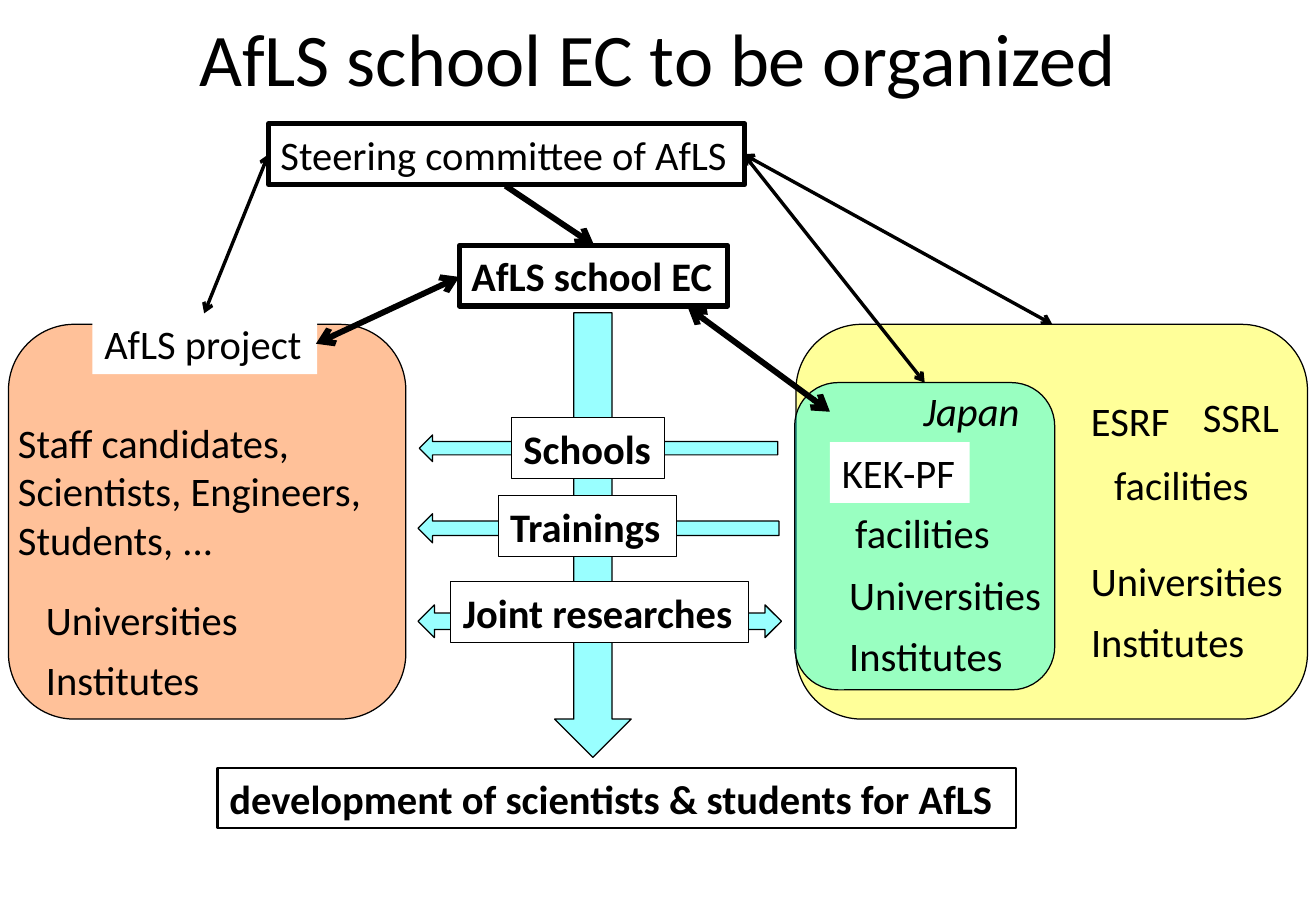
from lxml import etree
from pptx import Presentation
from pptx.dml.color import RGBColor
from pptx.enum.shapes import MSO_CONNECTOR, MSO_SHAPE
from pptx.enum.text import MSO_ANCHOR, PP_ALIGN
from pptx.oxml.ns import qn
from pptx.util import Inches, Pt

RECT = MSO_SHAPE.RECTANGLE
ROUND = MSO_SHAPE.ROUNDED_RECTANGLE
LEFT_ARROW = MSO_SHAPE.LEFT_ARROW
BOTH_ARROW = MSO_SHAPE.LEFT_RIGHT_ARROW
STRAIGHT = MSO_CONNECTOR.STRAIGHT
TOP, MIDDLE = MSO_ANCHOR.TOP, MSO_ANCHOR.MIDDLE
LEFT, CENTER = PP_ALIGN.LEFT, PP_ALIGN.CENTER

BLACK = RGBColor(0x00, 0x00, 0x00)
WHITE = RGBColor(0xFF, 0xFF, 0xFF)
CYAN = RGBColor(0x00, 0xFF, 0xFF)
ORANGE = RGBColor(0xFF, 0x66, 0x00)
YELLOW = RGBColor(0xFF, 0xFF, 0x00)

ROW = 0.5  # height of a one-line label


def write(frame, text, size=24, bold=False, italic=False, align=LEFT,
          anchor=TOP, right=0):
    """Fill a text frame, one paragraph for each line of text."""
    frame.word_wrap = True
    frame.vertical_anchor = anchor
    frame.margin_right = Inches(right)
    for i, line in enumerate(text.split("\n")):
        para = frame.paragraphs[0] if i == 0 else frame.add_paragraph()
        para.alignment = align
        run = para.add_run()
        run.text = line
        font = run.font
        font.name, font.size = "Calibri", Pt(size)
        font.bold, font.italic = bold, italic
        font.color.rgb = BLACK


class Board:
    def __init__(self, slide, alpha=40):
        self.shapes = slide.shapes
        self.alpha = alpha

    def shape(self, kind, x, y, w, h, fill=None, line=0.75, clear=False):
        item = self.shapes.add_shape(
            kind, Inches(x), Inches(y), Inches(w), Inches(h))
        item.shadow.inherit = False
        if fill is None:
            item.fill.background()
        else:
            item.fill.solid()
            item.fill.fore_color.rgb = fill
        if clear:
            color = item.fill._xPr.find(qn("a:solidFill"))[0]
            etree.SubElement(color, qn("a:alpha"), val=str(self.alpha * 1000))
        if line:
            item.line.color.rgb = BLACK
            item.line.width = Pt(line)
        else:
            item.line.fill.background()
        return item

    def tint(self, kind, x, y, w, h, fill=CYAN):
        return self.shape(kind, x, y, w, h, fill, clear=True)

    def box(self, text, x, y, w, fill=WHITE, line=0.75, **style):
        write(self.shape(RECT, x, y, w, ROW, fill, line).text_frame,
              text, **style)

    def label(self, text, x, y, w, h=ROW, **style):
        item = self.shapes.add_textbox(
            Inches(x), Inches(y), Inches(w), Inches(h))
        write(item.text_frame, text, **style)

    def link(self, start, end, width=2, ends=("headEnd", "tailEnd")):
        points = [Inches(v) for v in (*start, *end)]
        item = self.shapes.add_connector(STRAIGHT, *points)
        item.line.color.rgb = BLACK
        item.line.width = Pt(width)
        for tag in ends:
            etree.SubElement(item.line._get_or_add_ln(), qn("a:" + tag),
                             type="arrow")
        etree.SubElement(item._element.spPr, qn("a:effectLst"))


def main():
    deck = Presentation()
    deck.slide_width, deck.slide_height = Inches(10.83), Inches(7.5)
    board = Board(deck.slides.add_slide(deck.slide_layouts[6]))

    # Block arrows
    board.tint(LEFT_ARROW, 3.05, 4.09, 3.66, 0.63).rotation = 270
    board.tint(LEFT_ARROW, 3.44, 4.23, 2.97, 0.24)
    board.tint(LEFT_ARROW, 3.45, 3.58, 2.95, 0.22)
    board.tint(BOTH_ARROW, 3.44, 4.98, 2.99, 0.27)

    # Title
    board.label("AfLS school EC to be organized", 0.54, 0.04, 9.75, 0.85,
                size=44, align=CENTER, anchor=MIDDLE, right=0.1)

    # Project panel
    board.tint(ROUND, 0.07, 2.67, 3.27, 3.25, ORANGE)
    board.box("AfLS project", 0.76, 2.58, 1.85, line=0)
    board.label("Staff candidates,\nScientists, Engineers,\nStudents, ...",
                0.05, 3.39, 3.07, 1.31)

    # Committees
    board.box("AfLS school EC", 3.78, 2.02, 2.21, None, 3, bold=True)
    board.box("Steering committee of AfLS", 2.21, 1.02, 3.92, None, 3)

    # World panel
    board.tint(ROUND, 6.55, 2.67, 4.21, 3.25, YELLOW)
    board.label("ESRF", 8.88, 3.21, 0.86)
    board.label("SSRL", 9.8, 3.18, 0.84)
    board.label("facilities", 9.07, 3.74, 1.33)

    # Links from the steering committee
    hub = (6.12, 1.27)
    board.link((8.66, 2.67), hub)
    board.link((7.61, 3.15), hub)
    board.link((1.68, 2.58), (2.21, 1.27))

    # Japan panel
    board.tint(ROUND, 6.54, 3.15, 2.14, 2.53)
    board.box("KEK-PF", 6.83, 3.64, 1.15, line=0)
    board.label("facilities", 6.94, 4.13, 1.33)
    board.label("Japan", 7.5, 3.13, 1.1, italic=True)

    # Members of each panel
    for x, upper, lower in ((0.28, 4.85, 5.34), (6.89, 4.64, 5.15),
                            (8.88, 4.53, 5.03)):
        board.label("Universities", x, upper, 1.8)
        board.label("Institutes", x, lower, 1.48)

    # Activities and goal
    for text, x, y, w, line in (
            ("Schools", 4.21, 3.44, 1.26, 0.75),
            ("Trainings", 4.1, 4.08, 1.47, 0.75),
            ("Joint researches", 3.71, 4.79, 2.45, 0.75),
            ("development of scientists & students for AfLS",
             1.79, 6.32, 6.57, 1.25)):
        board.box(text, x, y, w, line=line, bold=True)

    # Links of the school committee
    board.link((4.16, 1.53), (4.89, 2.02), 3.5, ("tailEnd",))
    board.link((6.83, 3.39), (5.66, 2.53), 3.5)
    board.link((2.6, 2.83), (3.78, 2.28), 3.5)

    deck.save("out.pptx")


if __name__ == "__main__":
    main()
